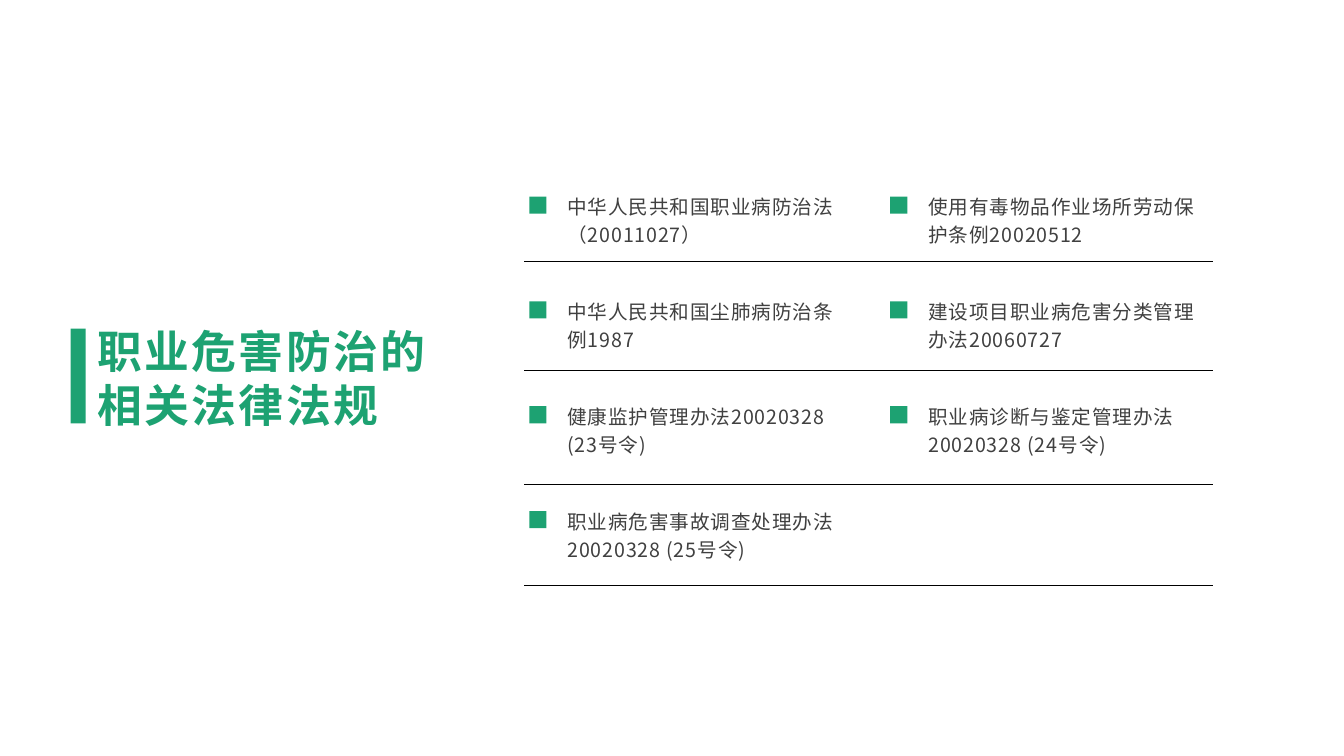
from lxml.etree import SubElement
from pptx import Presentation
from pptx.dml.color import RGBColor
from pptx.enum.shapes import MSO_CONNECTOR as Connector, MSO_SHAPE as Shape
from pptx.enum.text import MSO_ANCHOR as Anchor, MSO_AUTO_SIZE as AutoSize, PP_ALIGN as Align
from pptx.oxml.ns import qn
from pptx.util import Inches, Pt

GREEN = RGBColor(0x1D, 0xA2, 0x72)
GRAY = RGBColor(0x40, 0x40, 0x40)
BLACK = RGBColor(0, 0, 0)
FONT = "Noto Sans CJK SC"
TITLE_ONLY = 5

TITLE = "职业危害防治的相关法律法规"
REGULATIONS = [
    ["中华人民共和国职业病防治法（20011027）", "使用有毒物品作业场所劳动保护条例20020512"],
    ["中华人民共和国尘肺病防治条例1987", "建设项目职业病危害分类管理办法20060727"],
    ["健康监护管理办法20020328 (23号令)", "职业病诊断与鉴定管理办法20020328 (24号令)"],
    ["职业病危害事故调查处理办法20020328 (25号令)"],
]
RULE_ROWS = [0.72, 1.76, 2.85, 3.81]


class RegulationSlide:
    """Draws on one slide; grid cells start at LEFT, TOP and measure COLUMN by ROW inches."""

    LEFT, TOP, COLUMN, ROW = 5.2, 1.84, 3.58, 1.04

    def __init__(self, deck):
        self.slide = deck.slides.add_slide(deck.slide_layouts[TITLE_ONLY])

    def x(self, column):
        return Inches(self.LEFT + column * self.COLUMN)

    def y(self, row):
        return Inches(self.TOP + row * self.ROW)

    def add_span(self, para, text, size, color, spacing, bold=False):
        """Add a run; spacing is the gap between letters in hundredths of a point."""
        span = para.add_run()
        span.text = text
        font = span.font
        font.size, font.bold, font.name = Pt(size), bold, FONT
        font.color.rgb = color
        properties = font._element
        properties.set("spc", str(spacing))
        SubElement(properties, qn("a:ea"), typeface=FONT)

    def title(self, text, left, top, width, height):
        box = self.slide.shapes.title
        box.left, box.top, box.width, box.height = map(Inches, (left, top, width, height))
        frame = box.text_frame
        frame.word_wrap, frame.auto_size = True, AutoSize.NONE
        frame.vertical_anchor = Anchor.MIDDLE
        frame.margin_left = frame.margin_right = Inches(0.07)
        frame.margin_top = frame.margin_bottom = Inches(0.03)
        para = frame.paragraphs[0]
        para.alignment = Align.LEFT
        self.add_span(para, text, 32, GREEN, 160, bold=True)

    def block(self, left, top, width, height):
        block = self.slide.shapes.add_shape(Shape.RECTANGLE, left, top, width, height)
        block.shadow.inherit = False
        block.fill.solid()
        block.fill.fore_color.rgb = GREEN
        block.line.fill.background()

    def regulation(self, text, column, row):
        left, top = self.x(column), self.y(row)
        box = self.slide.shapes.add_textbox(left + Inches(0.33), top, Inches(2.96), Inches(0.7))
        box.text_frame.word_wrap = True
        para = box.text_frame.paragraphs[0]
        para.line_spacing, para.space_after = 1.2, Pt(8)
        self.add_span(para, text, 14, GRAY, 60)
        side = Inches(0.17)
        self.block(left + Inches(0.05), top + Inches(0.11), side, side)

    def rule(self, row):
        left, right, y = self.x(0), self.x(0) + Inches(6.83), self.y(row)
        rule = self.slide.shapes.add_connector(Connector.STRAIGHT, left, y, right, y)
        rule.line.color.rgb = BLACK
        rule.line.width = Pt(0.5)
        SubElement(rule._element.spPr, qn("a:effectLst"))


def main():
    deck = Presentation()
    deck.slide_width, deck.slide_height = Inches(13.33), Inches(7.5)
    page = RegulationSlide(deck)
    page.title(TITLE, 0.9, 2.33, 3.48, 2.83)
    for row, texts in enumerate(REGULATIONS):
        for column, text in enumerate(texts):
            page.regulation(text, column, row)
    for row in RULE_ROWS:
        page.rule(row)
    page.block(Inches(0.7), Inches(3.26), Inches(0.15), Inches(0.94))
    deck.save("out.pptx")


if __name__ == "__main__":
    main()
